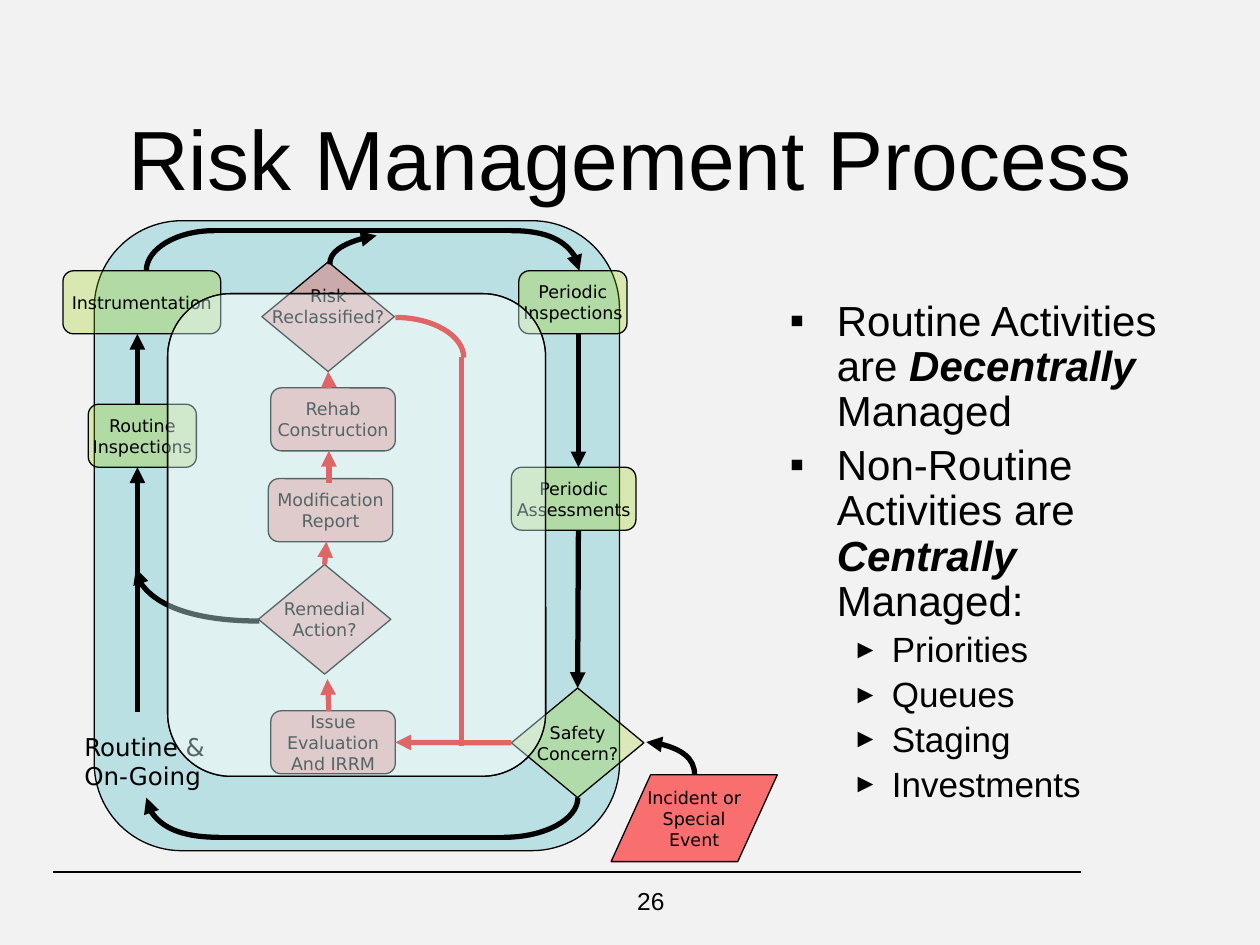
from dataclasses import dataclass

from lxml import etree
from pptx import Presentation
from pptx.dml.color import RGBColor
from pptx.enum.shapes import MSO_CONNECTOR, MSO_SHAPE
from pptx.enum.text import MSO_ANCHOR, PP_ALIGN
from pptx.oxml.ns import qn
from pptx.util import Cm, Pt

STRAIGHT = MSO_CONNECTOR.STRAIGHT
ROUNDED = MSO_SHAPE.ROUNDED_RECTANGLE
DECISION = MSO_SHAPE.FLOWCHART_DECISION
PARALLELOGRAM = MSO_SHAPE.PARALLELOGRAM
CENTER, LEFT = PP_ALIGN.CENTER, PP_ALIGN.LEFT
MIDDLE, TOP_ANCHOR = MSO_ANCHOR.MIDDLE, MSO_ANCHOR.TOP
TOP_SITE, LEFT_SITE, BOTTOM_SITE, RIGHT_SITE = range(4)
CURVE = 0.55  # control point share for a quarter of an ellipse


@dataclass(frozen=True)
class Theme:
    background: str = "F2F2F2"
    ink: str = "000000"
    white: str = "FFFFFF"
    panel: str = "BBE0E3"
    routine: str = "99CC00"
    special: str = "FF0000"
    font: str = "Arial"
    label_font: str = "DejaVu Sans"
    title: int = 48
    body: int = 24
    detail: int = 20
    note: int = 14
    label: int = 10
    outline: float = 0.75
    flow: float = 3


THEME = Theme()


def color(value):
    return RGBColor.from_string(value)


def add_span(para, text, size, font=THEME.font, strong=False):
    span = para.add_run()
    span.text = text
    span.font.size = Pt(size)
    span.font.name = font
    span.font.color.rgb = color(THEME.ink)
    span.font.bold = span.font.italic = strong


def write(box, text, size, font=THEME.font, align=CENTER, anchor=MIDDLE, wrap=True):
    """Fill a box with text, one paragraph for each line."""
    frame = box.text_frame
    frame.word_wrap = wrap
    frame.vertical_anchor = anchor
    for index, line in enumerate(text.split("\n")):
        para = frame.paragraphs[0] if index == 0 else frame.add_paragraph()
        para.alignment = align
        add_span(para, line, size, font)


def add_text(page, place, text, size, **style):
    box = page.shapes.add_textbox(*map(Cm, place))
    write(box, text, size, **style)
    return box


def add_block(page, kind, place, fill, opacity=100, text=""):
    box = page.shapes.add_shape(kind, *map(Cm, place))
    box.shadow.inherit = False
    box.fill.solid()
    box.fill.fore_color.rgb = color(fill)
    if opacity < 100:
        tint = box.fill._xPr.find(".//" + qn("a:srgbClr"))
        etree.SubElement(tint, qn("a:alpha"), val=str(opacity * 1000))
    box.line.color.rgb = color(THEME.ink)
    box.line.width = Pt(THEME.outline)
    if text:
        write(box, text, THEME.label, font=THEME.label_font, wrap=False)
    return box


def format_line(shape, tone, width, arrow):
    shape.line.color.rgb = color(tone)
    shape.line.width = Pt(width)
    if arrow:
        etree.SubElement(shape.line._get_or_add_ln(), qn("a:tailEnd"), type="triangle")


def add_line(page, start, end, tone=THEME.ink, width=THEME.flow, arrow=True,
             begin=None, finish=None):
    """Draw a line; begin and finish are optional (shape, site) joints."""
    line = page.shapes.add_connector(STRAIGHT, *map(Cm, start + end))
    format_line(line, tone, width, arrow)
    etree.SubElement(line._element.spPr, qn("a:effectLst"))
    if begin:
        line.begin_connect(*begin)
    if finish:
        line.end_connect(*finish)


def add_curve(page, start, corner, end, tone=THEME.ink, arrow=False):
    """Draw a quarter turn from start to end that bends toward corner."""
    controls = [tuple(p + (c - p) * CURVE for p, c in zip(point, corner))
                for point in (start, end)]
    points = [(Cm(x), Cm(y)) for x, y in [start, *controls, end]]
    builder = page.shapes.build_freeform(*points[0])
    builder.add_line_segments(points[1:], close=False)
    shape = builder.convert_to_shape()
    shape.shadow.inherit = False
    shape.fill.background()
    format_line(shape, tone, THEME.flow, arrow)
    # Turn the three straight segments into one Bezier segment
    segments = list(shape._element.iter(qn("a:lnTo")))
    bezier = etree.SubElement(segments[0].getparent(), qn("a:cubicBezTo"))
    for segment in segments:
        bezier.append(segment[0])
        segment.getparent().remove(segment)


def add_bullets(page, place, items):
    """Items are (level, spans); a span is (text, strong)."""
    frame = page.shapes.add_textbox(*map(Cm, place)).text_frame
    frame.word_wrap = True
    levels = [("▪", 100, 0.95, 0.95, THEME.body), ("►", 75, 2.06, 0.79, THEME.detail)]
    for index, (level, spans) in enumerate(items):
        mark, scale, margin, hang, size = levels[level]
        para = frame.paragraphs[0] if index == 0 else frame.add_paragraph()
        para.level = level
        props = para._p.get_or_add_pPr()
        props.set("marL", str(Cm(margin)))
        props.set("indent", str(-Cm(hang)))
        etree.SubElement(props, qn("a:buSzPct"), val=str(scale * 1000))
        etree.SubElement(props, qn("a:buFont"), typeface=THEME.font)
        etree.SubElement(props, qn("a:buChar"), char=mark)
        para.line_spacing = 0.9
        para.space_before = Pt(size * 0.2 if index else 0)
        for text, strong in spans:
            add_span(para, text, size, strong=strong)


def add_flow(page):
    # Routine steps on the outer loop
    for place, text in [
        ((1.78, 8.15, 2.18, 1.27), "Routine\nInspections"),
        ((1.27, 5.46, 3.18, 1.27), "Instrumentation"),
        ((10.46, 5.46, 2.18, 1.27), "Periodic\nInspections"),
        ((10.31, 9.42, 2.51, 1.27), "Periodic\nAssessments"),
    ]:
        add_block(page, ROUNDED, place, THEME.routine, 27, text)
    safety = add_block(page, DECISION, (10.31, 13.87, 2.67, 2.21),
                       THEME.routine, 24, "Safety\nConcern?")
    add_text(page, (1.45, 14.63, 2.95, 1.45), "Routine &\nOn-Going", THEME.note,
             font=THEME.label_font, align=LEFT, anchor=TOP_ANCHOR, wrap=False)

    # Non-routine steps in the inner column
    issue, _, _ = [
        add_block(page, ROUNDED, (left, top, 2.51, 1.27), THEME.special, 27, text)
        for left, top, text in [
            (5.46, 14.33, "Issue\nEvaluation\nAnd IRRM"),
            (5.41, 9.65, "Modification\nReport"),
            (5.46, 7.82, "Rehab\nConstruction"),
        ]
    ]
    remedial, risk = [
        add_block(page, DECISION, (left, top, 2.67, 2.21), THEME.special, 24, text)
        for left, top, text in [(5.21, 11.38, "Remedial\nAction?"),
                                (5.28, 5.28, "Risk\nReclassified?")]
    ]
    risk.text_frame.margin_bottom = Cm(0.55)
    incident = add_block(page, PARALLELOGRAM, (12.32, 15.62, 3.35, 1.75),
                         THEME.special, 54, "Incident or\nSpecial\nEvent")
    incident.adjustments[0] = 0.455

    # Outer loop
    add_line(page, (2.77, 14.35), (2.77, 9.42))
    add_line(page, (2.77, 8.15), (2.77, 6.73))
    add_curve(page, (2.95, 5.46), (2.95, 4.65), (4.32, 4.65))
    add_line(page, (4.29, 4.65), (10.46, 4.65), arrow=False)
    add_curve(page, (10.31, 4.65), (11.68, 4.65), (11.68, 5.46), arrow=True)
    add_line(page, (11.66, 6.73), (11.66, 9.42))
    add_line(page, (11.66, 10.69), (11.65, 13.87), finish=(safety, TOP_SITE))
    add_curve(page, (11.65, 16.08), (11.65, 16.88), (10.16, 16.88))
    add_line(page, (10.16, 16.88), (4.39, 16.88), arrow=False)
    add_curve(page, (4.42, 16.88), (2.95, 16.88), (2.95, 16.08), arrow=True)

    # Inner column, and the way back from reclassification
    red = THEME.special
    add_line(page, (10.31, 14.98), (7.97, 14.97), red,
             begin=(safety, LEFT_SITE), finish=(issue, RIGHT_SITE))
    add_line(page, (6.63, 14.33), (6.6, 13.69), red)
    add_line(page, (6.55, 11.38), (6.58, 10.92), red, begin=(remedial, TOP_SITE))
    add_line(page, (6.63, 9.73), (6.63, 9.09), red)
    add_line(page, (6.63, 7.82), (6.62, 7.49), red, finish=(risk, BOTTOM_SITE))
    add_curve(page, (7.97, 6.4), (9.35, 6.4), (9.35, 7.21), red)
    add_line(page, (9.3, 7.19), (9.3, 15.04), red, arrow=False)

    # Links between the loop and the other steps
    add_curve(page, (5.23, 12.52), (2.74, 12.52), (2.74, 11.46), arrow=True)
    add_curve(page, (14, 15.62), (14.02, 15.01), (13.03, 14.96), arrow=True)
    add_curve(page, (6.65, 5.33), (6.62, 4.88), (7.59, 4.75), arrow=True)


def main():
    deck = Presentation()
    deck.slide_width, deck.slide_height = Cm(25.4), Cm(19.05)
    page = deck.slides.add_slide(deck.slide_layouts[5])
    page.background.fill.solid()
    page.background.fill.fore_color.rgb = color(THEME.background)

    # Title and footer
    title = page.shapes.title
    title.left, title.top, title.width, title.height = map(Cm, (1.27, 2.11, 22.86, 2.11))
    write(title, "Risk Management Process", THEME.title)
    add_line(page, (21.79, 17.58), (1.07, 17.58), width=THEME.outline, arrow=False)
    add_text(page, (10.16, 17.73, 5.92, 1.32), "26", THEME.note, anchor=TOP_ANCHOR)

    # Process diagram, with a veil over its inner panel
    inner = (3.38, 5.92, 7.62, 9.73)
    add_block(page, ROUNDED, (1.9, 4.45, 10.59, 12.7), THEME.panel)
    add_block(page, ROUNDED, inner, THEME.white)
    add_flow(page)
    add_block(page, ROUNDED, inner, THEME.panel, 45)

    # Management notes
    add_bullets(page, (15.67, 5.92, 8.46, 11.1), [
        (0, [("Routine Activities are ", False), ("Decentrally", True), (" Managed", False)]),
        (0, [("Non-Routine Activities are ", False), ("Centrally", True), (" Managed:", False)]),
        *[(1, [(text, False)]) for text in ("Priorities", "Queues", "Staging", "Investments")],
    ])
    deck.save("out.pptx")


if __name__ == "__main__":
    main()
